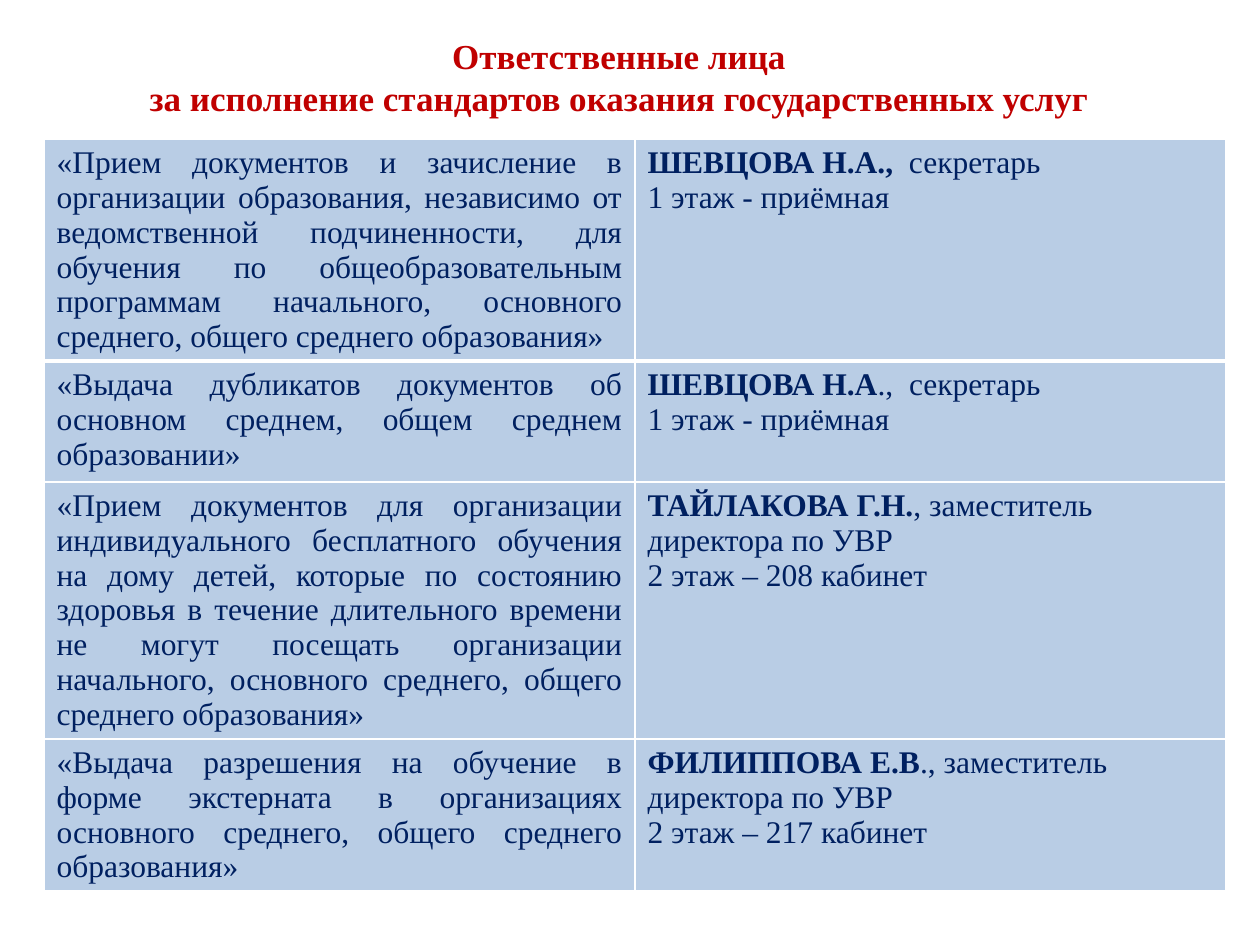
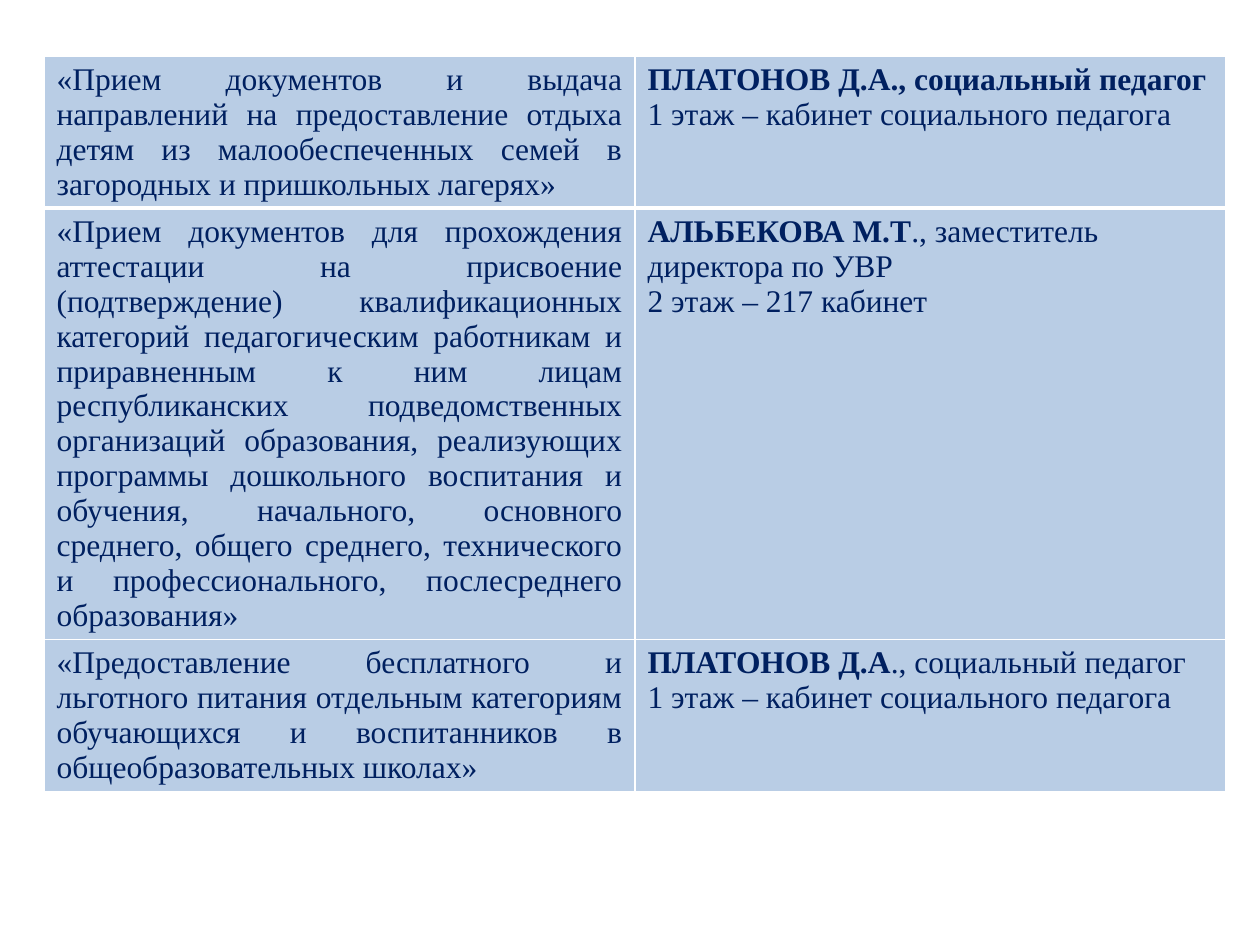
from dataclasses import dataclass

from lxml.etree import SubElement
from pptx import Presentation
from pptx.dml.color import RGBColor
from pptx.enum.text import MSO_ANCHOR, MSO_AUTO_SIZE, PP_ALIGN
from pptx.oxml.ns import qn
from pptx.util import Emu, Pt

SECRETARY_ROOM = "1 этаж - приёмная"
PEDAGOGUE_ROOM = "1 этаж – кабинет социального педагога"
DEPUTY = "заместитель директора по УВР"

SLIDES = [
    {
        "title": "Ответственные лица\nза исполнение стандартов оказания государственных услуг",
        "top": 139,
        "duties": [
            ("«Прием документов и зачисление в организации образования, независимо от "
             "ведомственной подчиненности, для обучения по общеобразовательным программам "
             "начального, основного среднего, общего среднего образования»",
             "ШЕВЦОВА Н.А.,", "  секретарь", SECRETARY_ROOM, 221),
            ("«Выдача дубликатов документов об основном среднем, общем среднем образовании»",
             "ШЕВЦОВА Н.А", ".,  секретарь", SECRETARY_ROOM, 121),
            ("«Прием документов для организации индивидуального бесплатного обучения на дому "
             "детей, которые по состоянию здоровья в течение длительного времени не могут "
             "посещать организации начального, основного среднего, общего среднего образования»",
             "ТАЙЛАКОВА Г.Н.", f", {DEPUTY}", "2 этаж – 208 кабинет", 257),
            ("«Выдача разрешения на обучение в форме экстерната в организациях основного "
             "среднего, общего среднего образования»",
             "ФИЛИППОВА Е.В", f"., {DEPUTY}", "2 этаж – 217 кабинет", 151),
        ],
    },
    {
        "title": None,
        "top": 56,
        "duties": [
            ("«Прием документов и выдача направлений на предоставление отдыха детям из "
             "малообеспеченных семей в загородных и пришкольных лагерях»",
             "ПЛАТОНОВ Д.А., социальный педагог", "", PEDAGOGUE_ROOM, 151),
            ("«Прием документов для прохождения аттестации на присвоение (подтверждение) "
             "квалификационных категорий педагогическим работникам и приравненным к ним лицам "
             "республиканских подведомственных организаций образования, реализующих программы "
             "дошкольного воспитания и обучения, начального, основного среднего, общего "
             "среднего, технического и профессионального, послесреднего образования»",
             "АЛЬБЕКОВА М.Т", f"., {DEPUTY}", "2 этаж – 217 кабинет", 431),
            ("«Предоставление бесплатного и льготного питания отдельным категориям обучающихся "
             "и воспитанников в общеобразовательных школах»",
             "ПЛАТОНОВ Д.А", "., социальный педагог", PEDAGOGUE_ROOM, 151),
        ],
    },
]

SLIDE_SIZE = (1260, 945)
TITLE_BOX = (44, 28, 1150, 97)
TABLE_LEFT, COLUMN_WIDTH = 44, 591
TITLE_ONLY, BLANK = 5, 6


@dataclass(frozen=True)
class Theme:
    font: str = "Times New Roman"
    title_size: int = 20
    body_size: int = 18
    title: str = "C00000"
    text: str = "002060"
    cell: str = "B9CDE5"
    border: str = "FFFFFF"
    thin: int = 1
    thick: int = 3


THEME = Theme()


def px(length):
    return Emu(round(length * 914400 / 126))


def style(run, size, color, bold):
    run.font.name = THEME.font
    run.font.size = Pt(size)
    run.font.color.rgb = RGBColor.from_string(color)
    run.font.bold = bold


def write_runs(paragraph, parts, align):
    paragraph.alignment = align
    for words, bold in parts:
        if words:
            run = paragraph.add_run()
            run.text = words
            style(run, THEME.body_size, THEME.text, bold)


def dress_cell(cell, row):
    widths = {
        "lnL": THEME.thin,
        "lnR": THEME.thin,
        "lnT": THEME.thick if row == 1 else THEME.thin,
        "lnB": THEME.thick if row == 0 else THEME.thin,
    }
    properties = cell._tc.get_or_add_tcPr()
    for side, width in widths.items():
        line = SubElement(properties, qn(f"a:{side}"), w=str(Pt(width)))
        fill = SubElement(line, qn("a:solidFill"))
        SubElement(fill, qn("a:srgbClr"), val=THEME.border)
    cell.fill.solid()
    cell.fill.fore_color.rgb = RGBColor.from_string(THEME.cell)


def add_title(slide, words):
    title = slide.shapes.title
    title.left, title.top, title.width, title.height = map(px, TITLE_BOX)
    frame = title.text_frame
    frame.text = words
    frame.word_wrap = True
    frame.auto_size = MSO_AUTO_SIZE.NONE
    frame.vertical_anchor = MSO_ANCHOR.MIDDLE
    for paragraph in frame.paragraphs:
        paragraph.alignment = PP_ALIGN.CENTER
        for run in paragraph.runs:
            style(run, THEME.title_size, THEME.title, True)


def add_duties(slide, top, duties):
    height = sum(duty[-1] for duty in duties)
    table = slide.shapes.add_table(
        len(duties), 2, px(TABLE_LEFT), px(top), px(2 * COLUMN_WIDTH), px(height)
    ).table
    table.first_row = table.horz_banding = False
    for column in table.columns:
        column.width = px(COLUMN_WIDTH)
    for row, (service, person, post, room, row_height) in enumerate(duties):
        table.rows[row].height = px(row_height)
        service_cell, person_cell = table.rows[row].cells
        for cell in (service_cell, person_cell):
            dress_cell(cell, row)
        write_runs(service_cell.text_frame.paragraphs[0], [(service, False)], PP_ALIGN.JUSTIFY)
        contact = person_cell.text_frame
        write_runs(contact.paragraphs[0], [(person, True), (post, False)], PP_ALIGN.LEFT)
        write_runs(contact.add_paragraph(), [(room, False)], PP_ALIGN.LEFT)


def main():
    deck = Presentation()
    deck.slide_width, deck.slide_height = map(px, SLIDE_SIZE)
    for content in SLIDES:
        layout = TITLE_ONLY if content["title"] else BLANK
        slide = deck.slides.add_slide(deck.slide_layouts[layout])
        if content["title"]:
            add_title(slide, content["title"])
        add_duties(slide, content["top"], content["duties"])
    deck.save("out.pptx")


if __name__ == "__main__":
    main()
